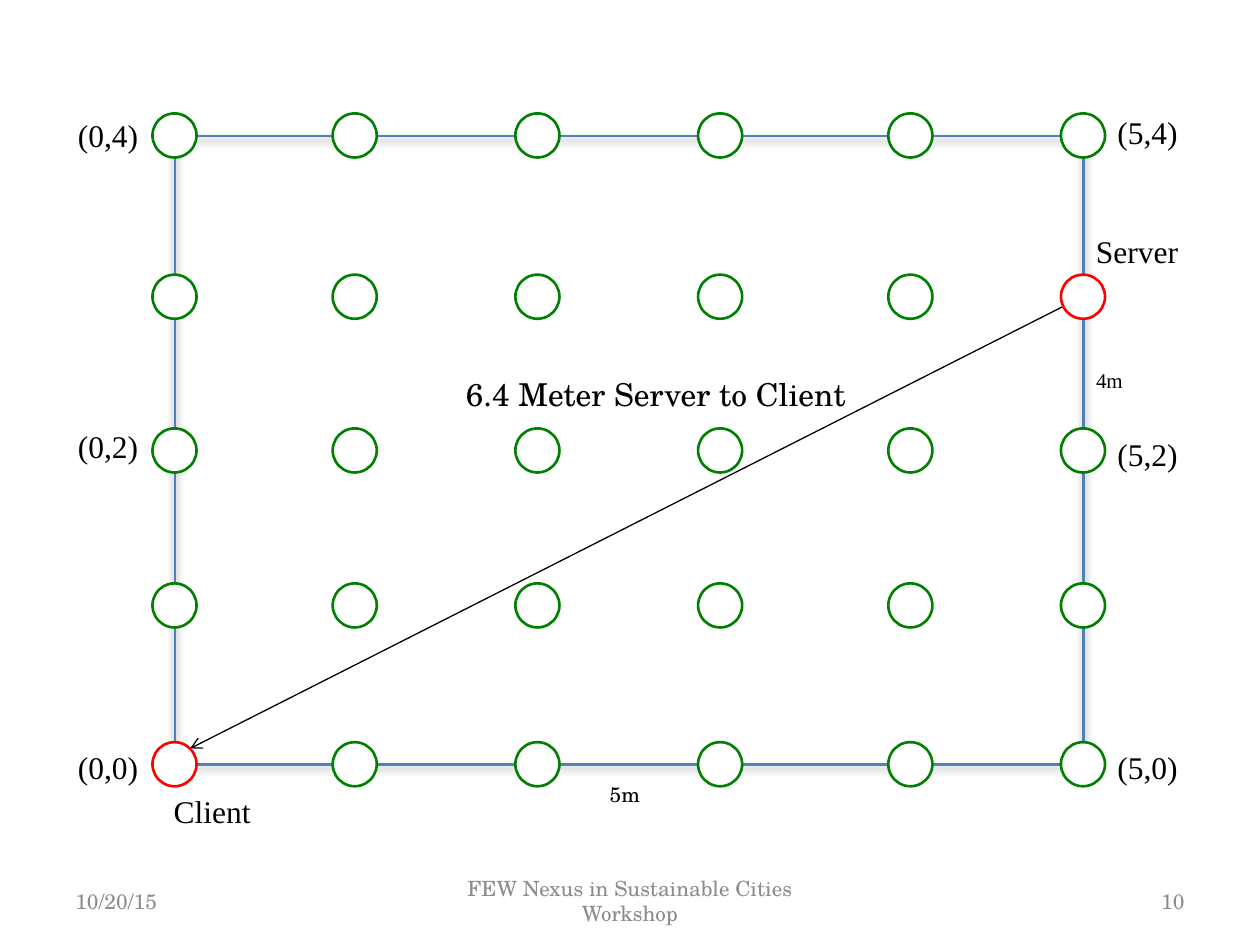
from lxml.etree import SubElement
from pptx import Presentation
from pptx.dml.color import RGBColor
from pptx.enum.shapes import MSO_CONNECTOR, MSO_SHAPE
from pptx.enum.text import MSO_ANCHOR, MSO_AUTO_SIZE, PP_ALIGN
from pptx.oxml.ns import qn
from pptx.util import Inches, Pt

SERIF = "Times New Roman"
SCHOLA = "TeX Gyre Schola"
COLUMNS = [0, 1.43, 2.88, 4.33, 5.84, 7.21]  # node centres from the grid's left
ROWS = [0, 1.28, 2.5, 3.73, 4.99]  # node centres from the grid's top
NODE = 0.35
SERVER, CLIENT = (5, 1), (0, 4)  # column, row


def color(value):
    return RGBColor.from_string(value)


def add_text(s, text, x, y, w, h, size=18, font=SERIF, fill="000000",
             align=PP_ALIGN.LEFT, anchor=MSO_ANCHOR.TOP, grow=True):
    tf = s.shapes.add_textbox(Inches(x), Inches(y), Inches(w), Inches(h)).text_frame
    tf.word_wrap = True
    tf.auto_size = MSO_AUTO_SIZE.SHAPE_TO_FIT_TEXT if grow else MSO_AUTO_SIZE.NONE
    tf.vertical_anchor = anchor
    p = tf.paragraphs[0]
    p.alignment = align
    r = p.add_run()
    r.text = text
    r.font.size = Pt(size)
    r.font.name = font
    r.font.color.rgb = color(fill)


def add_line(s, start, end, stroke, width, arrow=False, shadow=False):
    line = s.shapes.add_connector(MSO_CONNECTOR.STRAIGHT,
                                  *[Inches(v) for v in (*start, *end)])
    line.line.color.rgb = color(stroke)
    line.line.width = Pt(width)
    if arrow:
        SubElement(line.line._get_or_add_ln(), qn("a:tailEnd"), type="arrow")
    effects = SubElement(line._element.spPr, qn("a:effectLst"))
    if shadow:
        outer = SubElement(effects, qn("a:outerShdw"), blurRad=str(Pt(4.1)),
                           dist=str(Pt(2)), dir="5400000", rotWithShape="0")
        black = SubElement(outer, qn("a:srgbClr"), val="000000")
        SubElement(black, qn("a:alpha"), val="40000")


def add_node(s, x, y, stroke):
    node = s.shapes.add_shape(MSO_SHAPE.OVAL, Inches(x), Inches(y),
                              Inches(NODE), Inches(NODE))
    node.shadow.inherit = False
    node.fill.solid()
    node.fill.fore_color.rgb = color("FFFFFF")
    node.line.color.rgb = color(stroke)
    node.line.width = Pt(1.5)


def add_grid(s, x, y, w, h):
    # Path from server to client, under the nodes
    add_line(s, (x + w, y + 1.27), (x + 0.12, y + h - 0.13), "000000", 0.75, arrow=True)

    # Sides of the area
    corners = [(x, y), (x + w, y), (x + w, y + h), (x, y + h)]
    for start, end in zip(corners, corners[1:] + corners[:1]):
        add_line(s, start, end, "4F81BD", 1.5, shadow=True)

    # Nodes
    for row, dy in enumerate(ROWS):
        for column, dx in enumerate(COLUMNS):
            stroke = "FF0000" if (column, row) in (SERVER, CLIENT) else "008000"
            add_node(s, x + dx - 0.18, y + dy - 0.18, stroke)


def add_labels(s, x, y, w, h):
    # Coordinates left and right of the grid
    for level, left_dy, right_dy in [(4, -0.21, -0.23), (2, 2.26, 2.32), (0, 4.81, 4.81)]:
        add_text(s, f"(0,{level})", x - 0.87, y + left_dy, 0.76, 0.4)
        add_text(s, f"(5,{level})", x + w + 0.17, y + right_dy, 0.76, 0.4)

    # Side lengths
    add_text(s, "5m", x + 3.35, y + h + 0.08, 0.65, 0.3, size=12, font=SCHOLA)
    add_text(s, "4m", x + w, y + 1.79, 0.68, 0.3, size=12)

    # End points and their distance
    add_text(s, "Server", x + w, y + 0.71, 0.94, 0.4)
    add_text(s, "Client", x - 0.11, y + h + 0.17, 0.86, 0.4)
    add_text(s, "6.4 Meter Server to Client", x + 2.21, y + 1.85, 3.9, 0.41, font=SCHOLA)


def add_footer(s, x, y, w, h):
    side, middle = 2.33, 3.17
    for text, left, width, align in [
        ("10/20/15", x, side, PP_ALIGN.LEFT),
        ("FEW Nexus in Sustainable Cities Workshop", x + (w - middle) / 2, middle,
         PP_ALIGN.CENTER),
        ("10", x + w - side, side, PP_ALIGN.RIGHT),
    ]:
        add_text(s, text, left, y, width, h, size=12, font=SCHOLA, fill="8C8C8C",
                 align=align, anchor=MSO_ANCHOR.MIDDLE, grow=False)


def main():
    prs = Presentation()
    prs.slide_width, prs.slide_height = Inches(10), Inches(7.5)
    s = prs.slides.add_slide(prs.slide_layouts[6])
    area = (1.39, 1.08, COLUMNS[-1], ROWS[-1])
    add_grid(s, *area)
    add_labels(s, *area)
    add_footer(s, 0.5, 6.95, 9, 0.4)
    prs.save("out.pptx")


if __name__ == "__main__":
    main()
